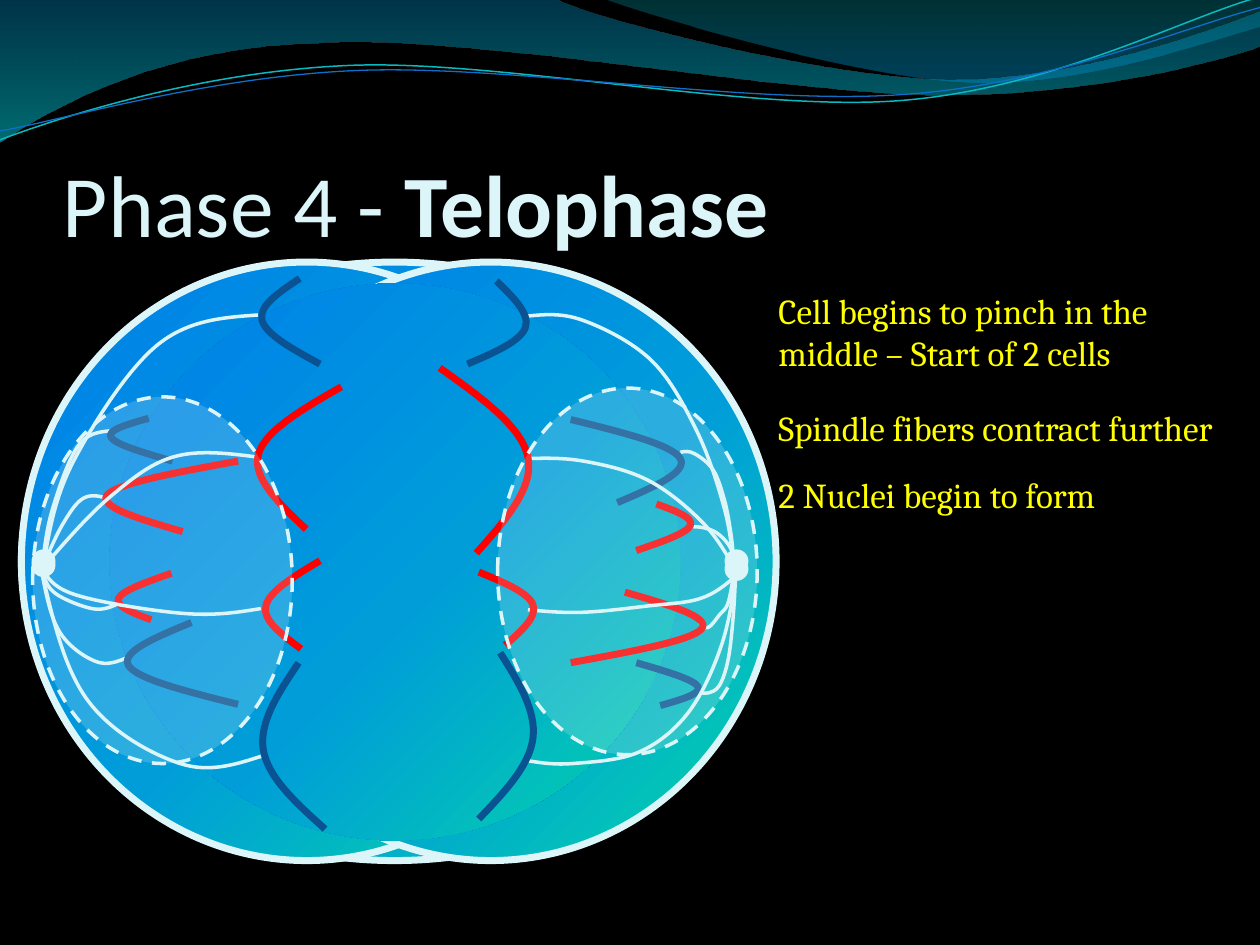
import dataclasses
import itertools

import pptx
import pptx.dml.color
import pptx.enum.dml
import pptx.enum.shapes
import pptx.enum.text
import pptx.oxml
import pptx.oxml.ns
import pptx.util

WIDTH, HEIGHT = 10, 7.5
PALE, RED, NAVY, YELLOW = "DBF5F9", "FF0000", "0B5292", "FFFF00"
Point = tuple[float, float]
Box = tuple[float, float, float, float]


@dataclasses.dataclass
class Gradient:
    """Stops are (position %, colour, opacity %); no angle means circular from bottom right."""
    stops: list[tuple[int, str, int]]
    angle: int | None = None


@dataclasses.dataclass
class Strand:
    knots: list[Point]
    color: str = PALE
    width: float = 2


CELL_FILL = Gradient([(0, "03D4A8", 100), (45, "009DD9", 100),
                      (85, "0087E6", 100), (100, "005CBF", 100)])

OUTER_POLES = [(0.25, 4.36), (5.75, 4.36)]
OUTER_STRANDS = [
    Strand([(0.87, 3.42), (0.62, 3.54), (0.42, 4.03), (0.34, 4.46)]),
    Strand([(0.87, 3.96), (0.67, 3.95), (0.51, 4.14), (0.35, 4.47)]),
    Strand([(1.01, 5.22), (0.76, 5.25), (0.47, 5.01), (0.33, 4.53)]),
    Strand([(0.92, 4.8), (0.73, 4.83), (0.44, 4.71), (0.34, 4.54)]),
    Strand([(5.4, 3.59), (5.51, 3.6), (5.66, 3.73), (5.75, 3.97), (5.8, 4.23), (5.82, 4.42)]),
    Strand([(5.49, 4.18), (5.59, 4.19), (5.69, 4.23), (5.78, 4.32), (5.83, 4.43)]),
    Strand([(5.55, 4.94), (5.62, 4.98), (5.71, 4.88), (5.78, 4.78), (5.83, 4.5)]),
    Strand([(5.55, 5.49), (5.62, 5.5), (5.71, 5.44), (5.78, 5.23), (5.82, 4.88), (5.84, 4.5)]),
    Strand([(4.53, 5.26), (5.57, 4.99), (4.96, 4.7)], RED, 4),
    Strand([(4.53, 3.33), (5.4, 3.64), (4.9, 3.99)], NAVY, 4),
    Strand([(5.05, 4.37), (5.48, 4.17), (5.21, 4)], RED, 4),
    Strand([(5.05, 5.26), (5.54, 5.45), (5.24, 5.6)], NAVY, 4),
    Strand([(1.89, 3.66), (0.85, 3.93), (1.45, 4.22)], RED, 4),
    Strand([(1.89, 5.59), (1.02, 5.28), (1.52, 4.94)], NAVY, 4),
    Strand([(1.36, 4.55), (0.94, 4.75), (1.2, 4.92)], RED, 4),
    Strand([(1.37, 3.66), (0.88, 3.47), (1.18, 3.32)], NAVY, 4),
]
INNER_POLES = [(0.25, 4.39), (5.75, 4.42)]
INNER_STRANDS = [
    Strand([(2.05, 2.5), (1.26, 2.73), (0.59, 3.65), (0.35, 4.46)]),
    Strand([(2.06, 3.63), (1.4, 3.62), (0.89, 3.93), (0.37, 4.47)]),
    Strand([(2.08, 6), (1.43, 6.06), (0.69, 5.55), (0.33, 4.53)]),
    Strand([(2.07, 4.83), (1.48, 4.87), (0.63, 4.73), (0.35, 4.54)]),
    Strand([(4.18, 2.51), (4.62, 2.54), (5.17, 2.86), (5.53, 3.42), (5.75, 4.04), (5.82, 4.5)]),
    Strand([(4.17, 3.64), (4.63, 3.66), (5.14, 3.81), (5.57, 4.14), (5.83, 4.51)]),
    Strand([(4.19, 4.84), (4.62, 4.86), (5.14, 4.81), (5.56, 4.75), (5.83, 4.58)]),
    Strand([(4.2, 6.04), (4.55, 6.06), (5.07, 5.97), (5.46, 5.66), (5.72, 5.14), (5.84, 4.57)]),
    Strand([(3.49, 2.92), (4.19, 3.63), (3.78, 4.39)], RED, 4),
    Strand([(2.71, 3.07), (2.05, 3.61), (2.43, 4.2)], RED, 4),
    Strand([(2.58, 6.58), (2.09, 5.95), (2.37, 5.26)], NAVY, 4),
    Strand([(3.8, 6.5), (4.23, 5.86), (3.97, 5.18)], NAVY, 4),
    Strand([(3.8, 4.54), (4.23, 4.8), (4.01, 5.12)], RED, 4),
    Strand([(2.54, 4.45), (2.11, 4.81), (2.39, 5.15)], RED, 4),
    Strand([(2.54, 2.89), (2.08, 2.54), (2.38, 2.21)], NAVY, 4),
    Strand([(3.71, 2.89), (4.17, 2.6), (3.94, 2.23)], NAVY, 4),
]

# Each wave is a start point followed by Bezier triples.
BROAD_WAVE = [(0, 0), (0, 0), (4.4, -0.01), (4.4, -0.01),
              (4.76, 0.17), (6.64, 0.63), (7.58, 0.63), (8.53, 0.63), (9.58, 0.26), (10, 0.09),
              (10, 0.09), (10.01, 0.36), (10.01, 0.36),
              (9.83, 0.44), (8.7, 0.76), (7.46, 0.75), (6.22, 0.75), (3.82, 0.28), (2.57, 0.34),
              (1.29, 0.36), (0.46, 0.83), (-0.01, 1.13)]
CORNER_WAVE = [(4.79, -0.01), (5.09, 0.11), (6.82, 0.62), (7.69, 0.65),
               (8.56, 0.69), (9.61, 0.32), (10, 0.21), (10, 0.21), (10, 0), (10, 0)]
TEAL_LINE = [(0, 1.11), (0.48, 0.93), (1.58, 0.57), (2.77, 0.52), (3.95, 0.47),
             (5.93, 0.89), (7.13, 0.8), (8.33, 0.71), (9.38, 0.15), (9.98, -0.02)]
BLUE_LINE = [(0, 1.04), (0.47, 0.96), (1.64, 0.61), (2.83, 0.56), (4.03, 0.51),
             (5.97, 0.84), (7.17, 0.75), (8.36, 0.67), (9.41, 0.21), (10, 0.06)]


def rgb(color: str) -> pptx.dml.color.RGBColor:
    return pptx.dml.color.RGBColor.from_string(color)


def color_xml(color: str, opacity: int) -> str:
    return f'<a:srgbClr val="{color}"><a:alpha val="{opacity * 1000}"/></a:srgbClr>'


def paint(sp, fill: Gradient | str | None = None, opacity: int = 100,
          line: str | None = None, width: float = 1, dashed: bool = False) -> None:
    sp.shadow.inherit = False
    sp.fill.background()
    if fill:
        if isinstance(fill, Gradient):
            stops = "".join(f'<a:gs pos="{pos * 1000}">{color_xml(color, alpha)}</a:gs>'
                            for pos, color, alpha in fill.stops)
            course = ('<a:path path="circle"><a:fillToRect l="100000" t="100000"/></a:path>'
                      if fill.angle is None else f'<a:lin ang="{fill.angle * 60000}" scaled="0"/>')
            tag, body = "gradFill", f"<a:gsLst>{stops}</a:gsLst>{course}"
        else:
            tag, body = "solidFill", color_xml(fill, opacity)
        spPr = sp._element.spPr
        spPr.replace(spPr.find(pptx.oxml.ns.qn("a:noFill")), pptx.oxml.parse_xml(
            f'<a:{tag} {pptx.oxml.ns.nsdecls("a")}>{body}</a:{tag}>'))
    if line:
        sp.line.color.rgb = rgb(line)
        sp.line.width = pptx.util.Pt(width)
        if dashed:
            sp.line.dash_style = pptx.enum.dml.MSO_LINE.DASH
    else:
        sp.line.fill.background()


def add_ellipse(s, box: Box, **style) -> None:
    paint(s.shapes.add_shape(pptx.enum.shapes.MSO_SHAPE.OVAL, *map(pptx.util.Inches, box)), **style)


def add_bezier(s, points: list[Point], closed: bool = False, **style) -> None:
    """Draw a start point and Bezier triples by joining each three line segments into a curve."""
    emu = [(pptx.util.Inches(x), pptx.util.Inches(y)) for x, y in points]
    builder = s.shapes.build_freeform(*emu[0], scale=1.0)
    builder.add_line_segments(emu[1:], close=closed)
    sp = builder.convert_to_shape()
    segments = list(sp._element.iter(pptx.oxml.ns.qn("a:lnTo")))[:len(points) - 1]
    for first, second, third in zip(*[iter(segments)] * 3):
        curve = pptx.oxml.parse_xml(f'<a:cubicBezTo {pptx.oxml.ns.nsdecls("a")}/>')
        first.addprevious(curve)
        for segment in (first, second, third):
            curve.append(segment[0])
            segment.getparent().remove(segment)
    paint(sp, **style)


def smooth(knots: list[Point]) -> list[Point]:
    """Bezier points through the knots: each inner tangent is a sixth of its neighbours' chord."""
    def mix(a: Point, b: Point, share: float) -> Point:
        return a[0] + (b[0] - a[0]) * share, a[1] + (b[1] - a[1]) * share

    before, after = {}, {}
    for i in range(1, len(knots) - 1):
        (x0, y0), (x, y), (x1, y1) = knots[i - 1:i + 2]
        dx, dy = (x1 - x0) / 6, (y1 - y0) / 6
        before[i], after[i] = (x - dx, y - dy), (x + dx, y + dy)
    last = len(knots) - 1
    after[0] = mix(knots[0], before[1], 0.5)
    before[last] = mix(knots[last], after[last - 1], 0.5)
    return [knots[0], *itertools.chain.from_iterable(
        (after[i], before[i + 1], knots[i + 1]) for i in range(last))]


def add_spindle(s, poles: list[Point], strands: list[Strand]) -> None:
    for x, y in poles:
        add_ellipse(s, (x, y, 0.19, 0.19), fill=PALE)
    for strand in strands:
        add_bezier(s, smooth(strand.knots), line=strand.color, width=strand.width)


def add_text(s, box: Box, runs: list[tuple[str, bool]], *, font: str, size: float, color: str,
             insets: Box = (0.1, 0.05, 0.1, 0.05), anchor: str = "TOP") -> None:
    tf = s.shapes.add_textbox(*map(pptx.util.Inches, box)).text_frame
    tf.word_wrap = True
    tf.vertical_anchor = pptx.enum.text.MSO_ANCHOR[anchor]
    tf.margin_left, tf.margin_top, tf.margin_right, tf.margin_bottom = map(pptx.util.Inches, insets)
    for text, bold in runs:
        r = tf.paragraphs[0].add_run()
        r.text = text
        r.font.name, r.font.size, r.font.bold = font, pptx.util.Pt(size), bold
        r.font.color.rgb = rgb(color)


def add_note(s, top: float, text: str, height: float = 0.44) -> None:
    add_text(s, (6.08, top, 3.87, height), [(text, False)], font="Cambria", size=20, color=YELLOW)


def main() -> None:
    prs = pptx.Presentation()
    prs.slide_width, prs.slide_height = pptx.util.Inches(WIDTH), pptx.util.Inches(HEIGHT)
    s = prs.slides.add_slide(prs.slide_layouts[6])
    s.background.fill.solid()
    s.background.fill.fore_color.rgb = rgb("000000")

    add_bezier(s, BROAD_WAVE, True, fill=Gradient([(0, "0074A1", 45), (100, "00C6CF", 55)], 90))
    add_bezier(s, CORNER_WAVE, True, fill=Gradient([(0, "00A1A9", 30), (80, "008BBF", 45)], 90))
    add_bezier(s, TEAL_LINE, line="0AB8BF", width=0.85)
    add_bezier(s, BLUE_LINE, line="0F6FC6", width=0.75)

    add_ellipse(s, (0.17, 2.08, 5.92, 4.75), fill=CELL_FILL, line=PALE, width=4)
    add_text(s, (0.5, 0.77, 9, 1.25), [("Phase 4 - ", False), ("Telophase", True)], font="Calibri",
             size=50, color=PALE, insets=(0, 0.05, 0, 0), anchor="BOTTOM")
    for left in (0.17, 1.63):
        add_ellipse(s, (left, 2.08, 4.53, 4.75), fill=CELL_FILL, line=PALE, width=4)
    add_ellipse(s, (0.87, 2.25, 4.53, 4.42), fill=CELL_FILL)
    add_spindle(s, OUTER_POLES, OUTER_STRANDS)
    add_spindle(s, INNER_POLES, INNER_STRANDS)

    add_note(s, 2.25, "Cell begins to pinch in the middle – Start of 2 cells", 0.77)
    add_note(s, 3.18, "Spindle fibers contract further")
    for left, top in ((0.26, 3.15), (3.95, 3.08)):
        add_ellipse(s, (left, top, 2.06, 2.91), fill=PALE, opacity=20, line=PALE, dashed=True, width=2)
    add_note(s, 3.71, "2 Nuclei begin to form")
    prs.save("out.pptx")


if __name__ == "__main__":
    main()
